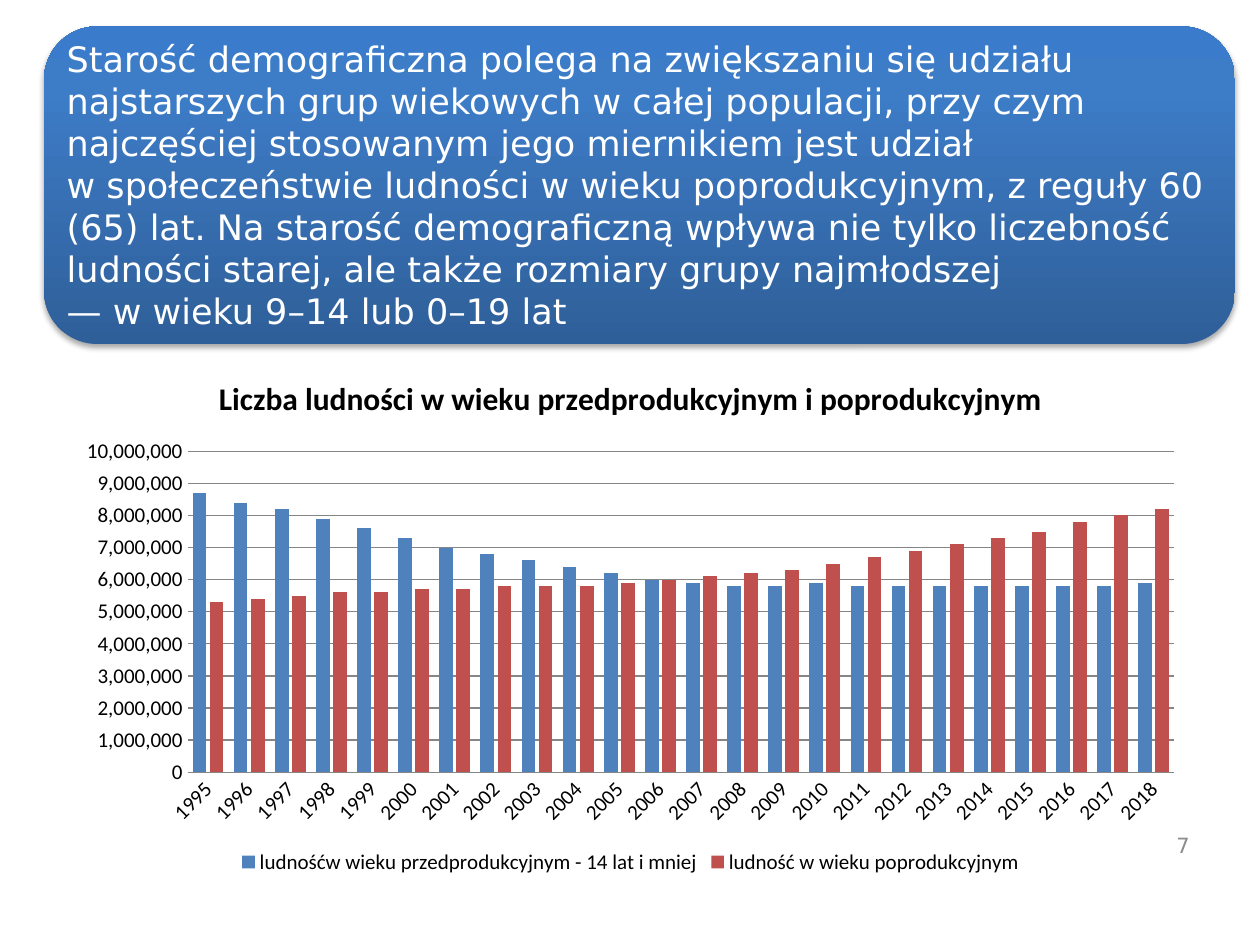
"""Build a slide on demographic ageing with a definition panel and a column chart."""
from copy import deepcopy

from lxml import etree
from pptx import Presentation
from pptx.chart.data import CategoryChartData
from pptx.dml.color import RGBColor
from pptx.enum.chart import XL_CHART_TYPE, XL_LEGEND_POSITION, XL_TICK_MARK
from pptx.enum.shapes import MSO_SHAPE
from pptx.enum.text import MSO_ANCHOR, PP_ALIGN
from pptx.oxml.ns import qn
from pptx.util import Inches, Pt

COLUMNS = XL_CHART_TYPE.COLUMN_CLUSTERED
BOTTOM = XL_LEGEND_POSITION.BOTTOM
NO_TICK = XL_TICK_MARK.NONE
ROUNDED = MSO_SHAPE.ROUNDED_RECTANGLE
MIDDLE = MSO_ANCHOR.MIDDLE
LEFT, RIGHT = PP_ALIGN.LEFT, PP_ALIGN.RIGHT

DEFINITION = (
    "Starość demograficzna polega na zwiększaniu się udziału najstarszych grup "
    "wiekowych w całej populacji, przy czym najczęściej stosowanym jego "
    "miernikiem jest udział \vw społeczeństwie ludności w wieku "
    "poprodukcyjnym, z reguły 60 (65) lat. Na starość demograficzną wpływa nie "
    "tylko liczebność ludności starej, ale także rozmiary grupy najmłodszej "
    "\v— w wieku 9–14 lub 0–19 lat"
)
PAGE_NUMBER = "7"
CHART_TITLE = "Liczba ludności w wieku przedprodukcyjnym i poprodukcyjnym"
YEARS = [str(year) for year in range(1995, 2019)]
MILLION = 1_000_000
POPULATION_MILLIONS = {
    "ludnośćw wieku przedprodukcyjnym - 14 lat i mniej": [
        8.7, 8.4, 8.2, 7.9, 7.6, 7.3, 7.0, 6.8, 6.6, 6.4, 6.2, 6.0,
        5.9, 5.8, 5.8, 5.9, 5.8, 5.8, 5.8, 5.8, 5.8, 5.8, 5.8, 5.9],
    "ludność w wieku poprodukcyjnym": [
        5.3, 5.4, 5.5, 5.6, 5.6, 5.7, 5.7, 5.8, 5.8, 5.8, 5.9, 6.0,
        6.1, 6.2, 6.3, 6.5, 6.7, 6.9, 7.1, 7.3, 7.5, 7.8, 8.0, 8.2],
}

THEME = {
    "text_font": "DejaVu Sans", "chart_font": "Calibri",
    "definition_size": 20, "number_size": 12, "label_size": 12, "title_size": 18,
    "white": "FFFFFF", "black": "000000", "number": "8C8C8C", "grid": "868686",
    "series": ["4F81BD", "C0504D"],
    "gradient": [(0, "2F5F99"), (0.8, "3D7CC7"), (1, "3A7CCB")],
}
PERCENT_AREAS = {
    "panel": (3.5, 2.8, 94.5, 33.6),
    "definition": (4.5, 4.4, 92.6, 30.27),
    "chart": (5.1, 37.47, 89.9, 55.6),
    "number": (88.6, 86.8, 6.8, 5.33),
}


def color(name):
    return RGBColor.from_string(THEME.get(name, name))


def style_font(font, face, size, color_name, bold=False):
    font.name, font.size, font.bold = THEME[face], Pt(THEME[size]), bold
    font.color.rgb = color(color_name)


def area(presentation, name):
    extents = (presentation.slide_width, presentation.slide_height) * 2
    return [round(extent * share / 100)
            for extent, share in zip(extents, PERCENT_AREAS[name])]


def add_panel(slide, bounds):
    panel = slide.shapes.add_shape(ROUNDED, *bounds)
    panel.line.fill.background()
    panel.fill.gradient()
    panel.fill.gradient_angle = 90
    properties = panel._element.spPr
    stop_list = properties.find(".//" + qn("a:gsLst"))
    stop_list.append(deepcopy(stop_list[0]))
    for stop, (position, shade) in zip(panel.fill.gradient_stops, THEME["gradient"]):
        stop.position = position
        stop.color.rgb = color(shade)
    panel.shadow.inherit = False
    shadow = etree.SubElement(
        properties.find(qn("a:effectLst")), qn("a:outerShdw"),
        blurRad=str(Pt(3.1)), dist=str(Pt(1.8)), dir="5400000", rotWithShape="0")
    shade = etree.SubElement(shadow, qn("a:srgbClr"), val=THEME["black"])
    etree.SubElement(shade, qn("a:alpha"), val="35000")


def add_text(slide, bounds, text, size, color_name, alignment, inset):
    frame = slide.shapes.add_textbox(*bounds).text_frame
    frame.word_wrap = True
    frame.vertical_anchor = MIDDLE
    frame.margin_left = frame.margin_right = Inches(inset[0])
    frame.margin_top = frame.margin_bottom = Inches(inset[1])
    frame.text = text
    paragraph = frame.paragraphs[0]
    paragraph.alignment = alignment
    style_font(paragraph.font, "text_font", size, color_name)


def add_population_chart(slide, bounds):
    data = CategoryChartData(number_format="#,##0")
    data.categories = YEARS
    for name, millions in POPULATION_MILLIONS.items():
        data.add_series(name, [round(value * MILLION) for value in millions])
    chart = slide.shapes.add_chart(COLUMNS, *bounds, data).chart
    style_font(chart.font, "chart_font", "label_size", "black")

    chart.has_title = True
    chart.chart_title.include_in_layout = False
    chart.chart_title.text_frame.text = CHART_TITLE
    style_font(chart.chart_title.text_frame.paragraphs[0].font,
               "chart_font", "title_size", "black", bold=True)
    chart.has_legend = True
    chart.legend.position = BOTTOM
    chart.legend.include_in_layout = False
    style_font(chart.legend.font, "chart_font", "label_size", "black")

    plot = chart.plots[0]
    plot.gap_width, plot.overlap, plot.vary_by_categories = 75, -25, False
    for series, shade in zip(plot.series, THEME["series"]):
        series.format.fill.solid()
        series.format.fill.fore_color.rgb = color(shade)

    years, values = chart.category_axis, chart.value_axis
    for axis in (years, values):
        axis.major_tick_mark = axis.minor_tick_mark = NO_TICK
        style_font(axis.tick_labels.font, "chart_font", "label_size", "black")
    years._element.find(".//" + qn("a:bodyPr")).set("rot", "-2700000")
    years.format.line.color.rgb = color("grid")
    values.minimum_scale, values.maximum_scale = 0, 10 * MILLION
    values.major_unit = MILLION
    values.tick_labels.number_format = "#,##0"
    values.tick_labels.number_format_is_linked = False
    values.format.line.fill.background()
    values.has_major_gridlines = True
    values.major_gridlines.format.line.color.rgb = color("grid")


def main():
    presentation = Presentation()
    presentation.slide_width, presentation.slide_height = Inches(10), Inches(7.5)
    slide = presentation.slides.add_slide(presentation.slide_layouts[6])
    add_text(slide, area(presentation, "number"), PAGE_NUMBER,
             "number_size", "number", RIGHT, (0.1, 0.05))
    add_population_chart(slide, area(presentation, "chart"))
    add_panel(slide, area(presentation, "panel"))
    add_text(slide, area(presentation, "definition"), DEFINITION,
             "definition_size", "white", LEFT, (0.08, 0.08))
    presentation.save("out.pptx")


if __name__ == "__main__":
    main()
